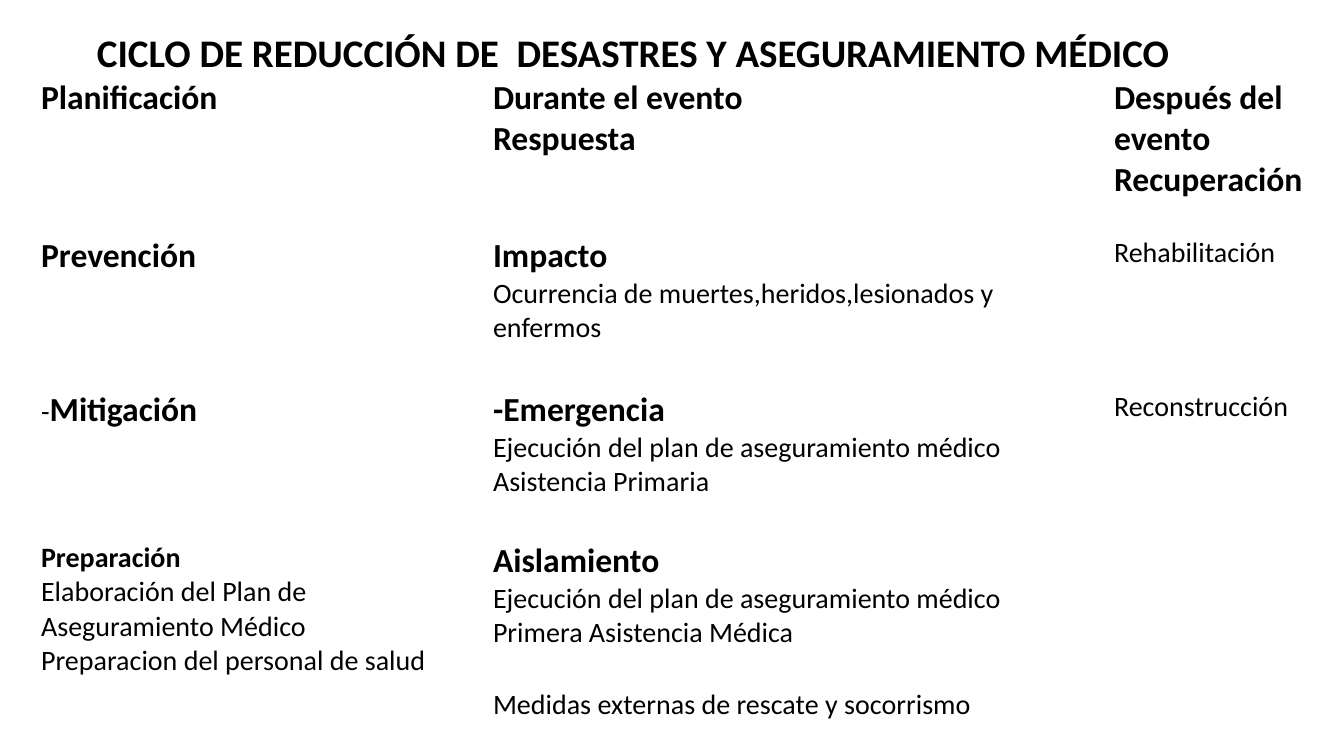
import pptx
import pptx.dml.color
import pptx.enum.text
import pptx.oxml.ns
import pptx.util
from lxml import etree

EMU_PER_PX = 914400 / 100.8
BLACK = pptx.dml.color.RGBColor(0, 0, 0)
WHITE = pptx.dml.color.RGBColor(255, 255, 255)
FONT = "Calibri"

TITLE = "CICLO DE REDUCCIÓN DE  DESASTRES Y ASEGURAMIENTO MÉDICO"
COLUMN_WIDTHS = [452, 621, 222]
ROW_HEIGHTS = [158, 154, 151, 147, 63]


def px(length):
    return pptx.util.Emu(round(length * EMU_PER_PX))


def heading(text):
    return [(text, 24, True)]


def body(text):
    return [(text, 20, False)]


# Each cell is a list of paragraphs, each paragraph a list of runs.
CYCLE = [
    [
        [heading("Planificación")],
        [heading("Durante el evento"), heading("Respuesta")],
        [heading("Después del evento"), heading("Recuperación")],
    ],
    [
        [heading("Prevención")],
        [heading("Impacto"),
         body("Ocurrencia de muertes,heridos,lesionados y enfermos")],
        [body("Rehabilitación")],
    ],
    [
        [body("-") + heading("Mitigación")],
        [heading("-Emergencia"),
         body("Ejecución del plan de aseguramiento médico"),
         body("Asistencia Primaria")],
        [body("Reconstrucción")],
    ],
    [
        [[("Preparación", 20, True)],
         body("Elaboración del Plan de Aseguramiento Médico"),
         body("Preparacion del personal de salud")],
        [heading("Aislamiento"),
         body("Ejecución del plan de aseguramiento médico"),
         body("Primera Asistencia Médica")],
        [],
    ],
    [
        [],
        [body("Medidas externas de rescate y socorrismo")],
        [],
    ],
]


def add_run(paragraph, text, size, bold):
    run = paragraph.add_run()
    run.text = text
    run.font.name = FONT
    run.font.size = pptx.util.Pt(size)
    run.font.bold = bold
    run.font.color.rgb = BLACK


def place_title(slide, left, top, width, height):
    title = slide.shapes.title
    title.left, title.top = px(left), px(top)
    title.width, title.height = px(width), px(height)
    frame = title.text_frame
    frame.word_wrap = True
    frame.auto_size = pptx.enum.text.MSO_AUTO_SIZE.NONE
    frame.vertical_anchor = pptx.enum.text.MSO_ANCHOR.TOP
    frame.margin_left, frame.margin_top = px(35), px(8)
    frame.margin_right = frame.margin_bottom = 0
    paragraph = frame.paragraphs[0]
    paragraph.alignment = pptx.enum.text.PP_ALIGN.LEFT
    paragraph.line_spacing = 0.9
    add_run(paragraph, TITLE, 27.9, True)


def add_borders(cell, bottom_width):
    properties = cell._tc.get_or_add_tcPr()
    for side, points in zip("LRTB", (1, 1, 1, bottom_width)):
        line = etree.SubElement(properties, pptx.oxml.ns.qn(f"a:ln{side}"),
                                w=str(pptx.util.Pt(points)))
        fill = etree.SubElement(line, pptx.oxml.ns.qn("a:solidFill"))
        etree.SubElement(fill, pptx.oxml.ns.qn("a:srgbClr"), val=str(WHITE))


def fill_cell(cell, paragraphs, bottom_width):
    add_borders(cell, bottom_width)
    cell.fill.solid()
    cell.fill.fore_color.rgb = WHITE
    frame = cell.text_frame
    for index, runs in enumerate(paragraphs):
        paragraph = frame.add_paragraph() if index else frame.paragraphs[0]
        for text, size, bold in runs:
            add_run(paragraph, text, size, bold)


def add_cycle_table(slide, left, top):
    frame = slide.shapes.add_table(
        len(ROW_HEIGHTS), len(COLUMN_WIDTHS), px(left), px(top),
        px(sum(COLUMN_WIDTHS)), px(sum(ROW_HEIGHTS)))
    table = frame.table
    table.horz_banding = False
    for column, width in zip(table.columns, COLUMN_WIDTHS):
        column.width = px(width)
    for row_index, (row, height) in enumerate(zip(table.rows, ROW_HEIGHTS)):
        row.height = px(height)
        bottom_width = 1 if row_index else 3
        for cell, paragraphs in zip(row.cells, CYCLE[row_index]):
            fill_cell(cell, paragraphs, bottom_width)


def main():
    presentation = pptx.Presentation()
    presentation.slide_width = px(1344)
    presentation.slide_height = px(756)
    slide = presentation.slides.add_slide(presentation.slide_layouts[5])
    slide.background.fill.solid()
    slide.background.fill.fore_color.rgb = WHITE
    place_title(slide, 62, 26, 1225, 46)
    add_cycle_table(slide, 31, 73)
    presentation.save("out.pptx")


if __name__ == "__main__":
    main()
